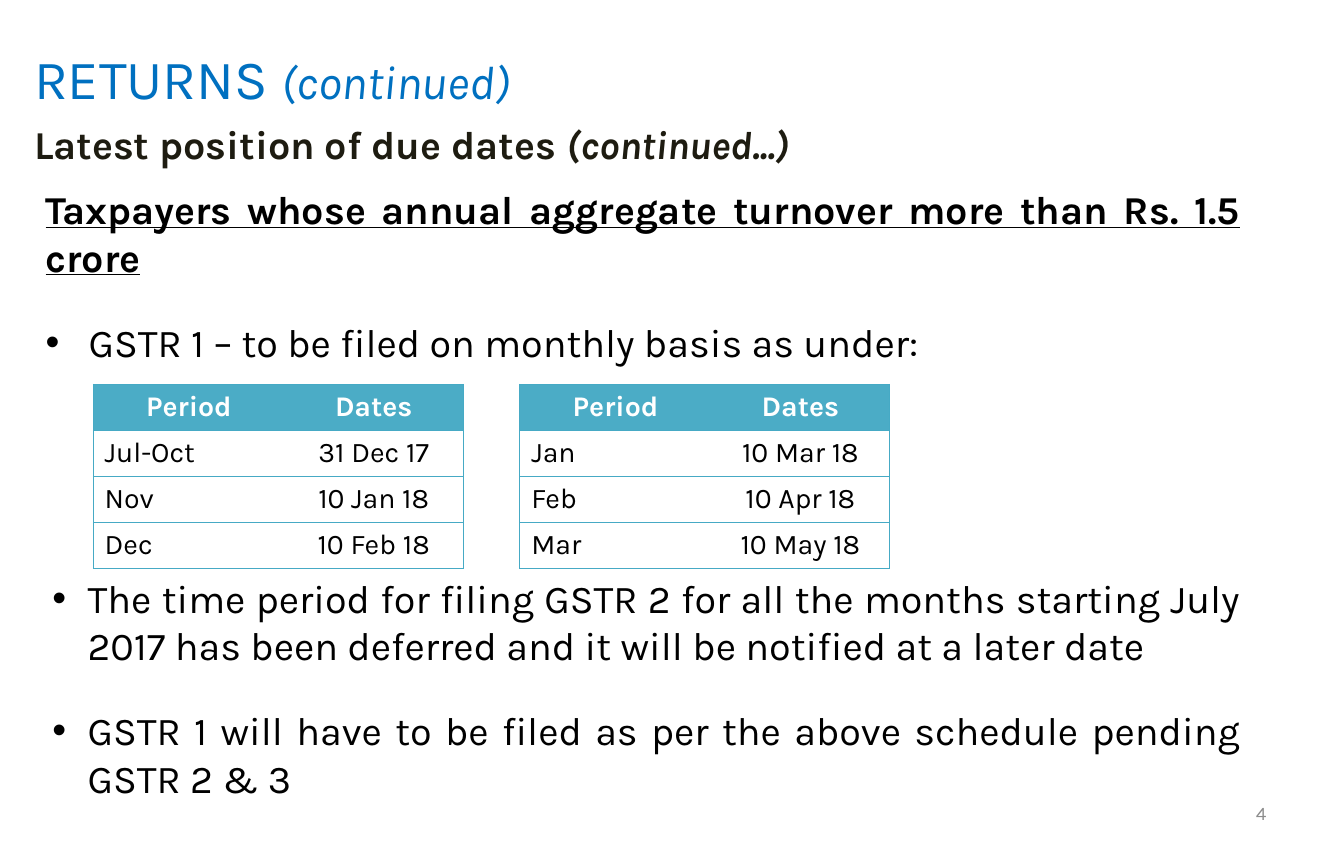
"""Build the slide on due dates for returns."""
from lxml import etree
from pptx import Presentation
from pptx import util as u
from pptx.dml.color import RGBColor
from pptx.enum import text
from pptx.oxml import ns

TEAL, BLACK, WHITE = "46AAC5", "000000", "FFFFFF"
ALIGN = text.PP_ALIGN


def add_run(p, content, size=25, color=BLACK, bold=False, italic=False, underline=False):
    r = p.add_run()
    r.text = content
    f = r.font
    f.name, f.size, f.bold, f.italic, f.underline = "Karla", u.Pt(size), bold, italic, underline
    f.color.rgb = RGBColor.from_string(color)


def add_xml(parent, tag, **attrs):
    return etree.SubElement(parent, ns.qn(tag), attrs)


prs = Presentation()
prs.slide_width, prs.slide_height = u.Inches(189 / 16), u.Inches(7.5)
s = prs.slides.add_slide(prs.slide_layouts[1])
title, body = s.shapes.title, s.placeholders[1]
number = s.shapes.add_textbox(0, 0, 0, 0)

for sp, box, anchor in [
    (title, (0, 0.09, 10.63, 1.57), text.MSO_ANCHOR.MIDDLE),
    (body, (0.3, 1.58, 10.7, 5.5), text.MSO_ANCHOR.TOP),
    (number, (8.47, 6.95, 2.76, 0.4), text.MSO_ANCHOR.MIDDLE),
]:
    sp.left, sp.top, sp.width, sp.height = map(u.Inches, box)
    tf = sp.text_frame
    tf.word_wrap, tf.auto_size, tf.vertical_anchor = True, text.MSO_AUTO_SIZE.NONE, anchor

p = title.text_frame.paragraphs[0]
p.alignment, p.line_spacing = ALIGN.LEFT, 1.2
p._p.get_or_add_pPr().set("marL", str(u.Inches(0.2)))
add_run(p, "RETURNS ", size=35, color="0070C0")
add_run(p, "(continued)", size=30, color="0070C0", italic=True)
p.add_line_break()
add_run(p, "Latest position of due dates ", color="1E1C11", bold=True)
add_run(p, "(continued...)", color="1E1C11", bold=True, italic=True)

p = number.text_frame.paragraphs[0]
p.alignment = ALIGN.RIGHT
add_run(p, "4", size=12, color="8C8C8C")

tf = body.text_frame
for i, (content, level, margin, indent, before) in enumerate([
    ("Taxpayers whose annual aggregate turnover more than Rs. 1.5 crore", 0, 0, 0, 12),
    ("GSTR 1 – to be filed on monthly basis as under:", 0, 0.38, -0.38, 12),
    ("The time period for filing GSTR 2 for all the months starting July 2017 "
     "has been deferred and it will be notified at a later date", 1, 0.37, -0.31, 120),
    ("GSTR 1 will have to be filed as per the above schedule pending GSTR 2 & 3",
     1, 0.37, -0.31, 12),
]):
    heading = i == 0
    p = tf.paragraphs[0] if heading else tf.add_paragraph()
    p.level, p.alignment = level, ALIGN.JUSTIFY
    p.space_before, p.space_after = u.Pt(before), u.Pt(12)
    pPr = p._p.get_or_add_pPr()
    pPr.set("marL", str(u.Inches(margin)))
    pPr.set("indent", str(u.Inches(indent)))
    if heading:
        add_xml(pPr, "a:buNone")
    else:
        add_xml(pPr, "a:buFont", typeface="Arial")
        add_xml(pPr, "a:buChar", char="•")
    add_run(p, content, bold=heading, underline=heading)

header = ("Period", "Dates")
for left, rows in [
    (0.82, [header, ("Jul-Oct", "31 Dec 17"), ("Nov", "10 Jan 18"), ("Dec", "10 Feb 18")]),
    (4.57, [header, ("Jan", "10 Mar 18"), ("Feb", "10 Apr 18"), ("Mar", "10 May 18")]),
]:
    frame = s.shapes.add_table(len(rows), 2, *map(u.Inches, (left, 3.38, 3.25, 1.62)))
    table = frame.table
    table._tbl.tblPr.find(ns.qn("a:tableStyleId")).text = "{2D5ABB26-0587-4C30-8999-92F81FD0307C}"
    for column, width in zip(table.columns, (1.68, 1.57)):
        column.width = u.Inches(width)
    for i, row in enumerate(rows):
        for j, content in enumerate(row):
            cell = table.cell(i, j)
            tcPr = cell._tc.get_or_add_tcPr()
            for side in ("R" if j else "L", "T", "B"):
                ln = add_xml(tcPr, f"a:ln{side}", w=str(u.Pt(0.75)))
                add_xml(add_xml(ln, "a:solidFill"), "a:srgbClr", val=TEAL)
            cell.fill.solid()
            cell.fill.fore_color.rgb = RGBColor.from_string(WHITE if i else "4BACC6")
            p = cell.text_frame.paragraphs[0]
            p.alignment = ALIGN.CENTER if i == 0 or j else ALIGN.LEFT
            add_run(p, content, size=18, color=BLACK if i else WHITE, bold=i == 0)

prs.save("out.pptx")
